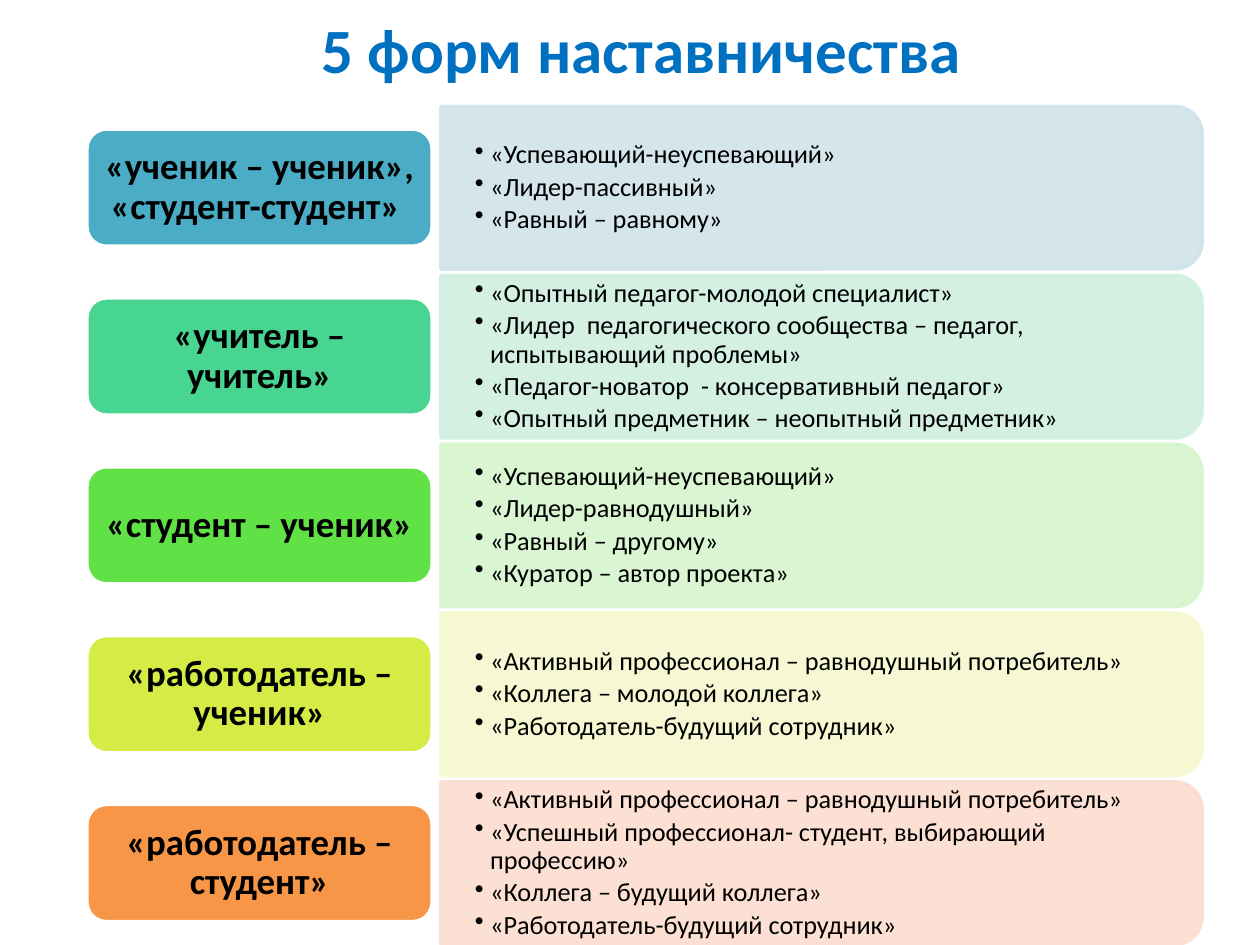
from lxml import etree
from pptx import Presentation
from pptx import util as u
from pptx.dml.color import RGBColor
from pptx.enum import shapes, text
from pptx.oxml.ns import qn

COLORS = {
    "title": "0070C0", "text": "000000", "white": "FFFFFF",
    "labels": ["4BACC6", "48D491", "60E146", "D5EC46", "F79646"],
    "panels": ["D0E3EA", "CFEFE1", "D6F4CE", "F6F8CF", "FCDDCF"],
}
ROWS = [
    ("«ученик – ученик», «студент-студент» ",
     ["«Успевающий-неуспевающий»", "«Лидер-пассивный»", "«Равный – равному»"]),
    ("«учитель – учитель»",
     ["«Опытный педагог-молодой специалист»",
      "«Лидер  педагогического сообщества – педагог, испытывающий проблемы»",
      "«Педагог-новатор  - консервативный педагог»",
      "«Опытный предметник – неопытный предметник»"]),
    ("«студент – ученик»",
     ["«Успевающий-неуспевающий»", "«Лидер-равнодушный»",
      "«Равный – другому»", "«Куратор – автор проекта»"]),
    ("«работодатель – ученик»",
     ["«Активный профессионал – равнодушный потребитель»",
      "«Коллега – молодой коллега»", "«Работодатель-будущий сотрудник»"]),
    ("«работодатель – студент»",
     ["«Активный профессионал – равнодушный потребитель»",
      "«Успешный профессионал- студент, выбирающий профессию»",
      "«Коллега – будущий коллега»", "«Работодатель-будущий сотрудник»"]),
]
ROW_TOP, ROW_STEP = 0.82, 1.34
LABEL_X, LABEL_W, LABEL_H = 0.69, 2.74, 0.93
PANEL_X, PANEL_W, PANEL_H = 3.5, 6.04, 1.29


def add_text(lines, x, y, w, h, size, color=COLORS["text"], bold=False,
             align=text.PP_ALIGN.CENTER, inset=(0.1, 0.05), spacing=1, after=0, bullet=False):
    tf = s.shapes.add_textbox(*map(u.Inches, (x, y, w, h))).text_frame
    tf.word_wrap = True
    tf.vertical_anchor = text.MSO_ANCHOR.MIDDLE
    tf.margin_left = tf.margin_right = u.Inches(inset[0])
    tf.margin_top = tf.margin_bottom = u.Inches(inset[1])
    for i, line in enumerate(lines):
        p = tf.add_paragraph() if i else tf.paragraphs[0]
        p.alignment, p.line_spacing, p.space_after = align, spacing, u.Pt(after)
        if bullet:
            p.level = 1
            pPr = p._p.get_or_add_pPr()
            pPr.set("marL", str(u.Inches(0.12)))
            pPr.set("indent", str(u.Inches(-0.12)))
            etree.SubElement(pPr, qn("a:buChar")).set("char", "•")
        r = p.add_run()
        r.text = line
        r.font.name, r.font.size, r.font.bold = "Calibri", u.Pt(size), bold
        r.font.color.rgb = RGBColor.from_string(color)


def add_block(kind, x, y, w, h, fill, line, alpha=None):
    sp = s.shapes.add_shape(kind, *map(u.Inches, (x, y, w, h)))
    sp.shadow.inherit = False
    sp.fill.solid()
    sp.fill.fore_color.rgb = RGBColor.from_string(fill)
    sp.line.color.rgb = RGBColor.from_string(line)
    sp.line.width = u.Pt(2)
    if alpha:
        for clr in sp._element.spPr.iter(qn("a:srgbClr")):
            etree.SubElement(clr, qn("a:alpha")).set("val", str(alpha * 1000))
    return sp


prs = Presentation()
prs.slide_width, prs.slide_height = u.Inches(10), u.Inches(7.5)
s = prs.slides.add_slide(prs.slide_layouts[6])

add_text(["5 форм наставничества"], 0.59, 0, 9, 0.76, 36, COLORS["title"], bold=True)

for i, (label, points) in enumerate(ROWS):
    mid = ROW_TOP + ROW_STEP * (i + 0.5)
    panel, fill = COLORS["panels"][i], COLORS["labels"][i]
    sp = add_block(shapes.MSO_SHAPE.ROUND_2_SAME_RECTANGLE,
                   PANEL_X + (PANEL_W - PANEL_H) / 2, mid - PANEL_W / 2,
                   PANEL_H, PANEL_W, panel, panel, alpha=90)
    sp.rotation = 90
    add_text(points, PANEL_X, mid - 0.585, 5.97, 1.17, 15, align=text.PP_ALIGN.LEFT,
             inset=(0.27, 0.14), spacing=0.9, after=2.25, bullet=True)
    add_block(shapes.MSO_SHAPE.ROUNDED_RECTANGLE, LABEL_X, mid - LABEL_H / 2,
              LABEL_W, LABEL_H, fill, COLORS["white"])
    add_text([label], LABEL_X + 0.05, mid - 0.42, LABEL_W - 0.1, 0.84, 21, bold=True,
             inset=(0.08, 0.04), spacing=0.9, after=7.35)

prs.save("out.pptx")
